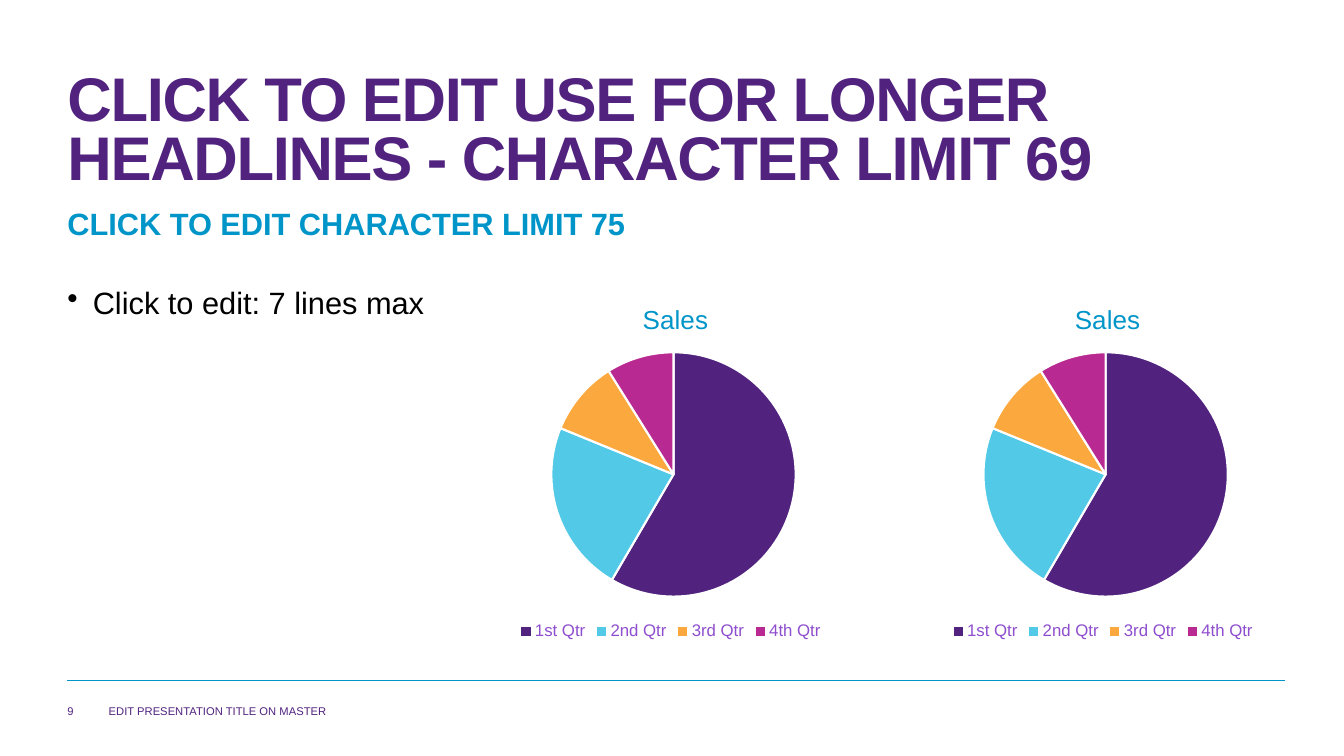
from lxml import etree
from pptx import Presentation
from pptx.chart.data import CategoryChartData
from pptx.dml.color import RGBColor
from pptx.enum.chart import XL_CHART_TYPE, XL_LEGEND_POSITION
from pptx.enum.shapes import MSO_CONNECTOR
from pptx.enum.text import MSO_ANCHOR
from pptx.oxml.ns import qn
from pptx.util import Cm, Pt

PIE = XL_CHART_TYPE.PIE
BOTTOM = XL_LEGEND_POSITION.BOTTOM
STRAIGHT = MSO_CONNECTOR.STRAIGHT
TOP, MIDDLE = MSO_ANCHOR.TOP, MSO_ANCHOR.MIDDLE
PURPLE, BLUE, LILAC = "51237F", "0095C8", "8E4ECE"
SLICES = [PURPLE, "51C9E7", "FBA93E", "B82A91"]
LEFT = 1.7


def style(font, size, color, bold=False):
    font.name, font.size, font.bold = "Arial", Pt(size), bold
    font.color.rgb = RGBColor.from_string(color)


def place(parent, index, **sides):
    for old in parent.findall(qn("c:layout")):
        parent.remove(old)
    layout = etree.Element(qn("c:layout"))
    manual = etree.SubElement(layout, qn("c:manualLayout"))
    if "w" in sides:
        etree.SubElement(manual, qn("c:layoutTarget"), val="inner")
    for tag in ("xMode", "yMode"):
        etree.SubElement(manual, qn("c:" + tag), val="edge")
    for tag, share in sides.items():
        etree.SubElement(manual, qn("c:" + tag), val=str(share))
    parent.insert(index, layout)


prs = Presentation()
prs.slide_width, prs.slide_height = Cm(33.87), Cm(19.05)
slide = prs.slides.add_slide(prs.slide_layouts[6])

rule = slide.shapes.add_connector(STRAIGHT, Cm(LEFT), Cm(17.15), Cm(32.39), Cm(17.15))
rule.line.color.rgb = RGBColor.from_string(BLUE)
rule.line.width = Pt(0.5)
etree.SubElement(rule._element.spPr, qn("a:effectLst"))

texts = [
    ("EDIT PRESENTATION TITLE ON MASTER", 2.74, 17.58, 18.42, 0.66, 8, PURPLE, False, MIDDLE),
    ("9", LEFT, 17.65, 0.53, 0.51, 8, PURPLE, False, MIDDLE),
    ("CLICK TO EDIT USE FOR LONGER HEADLINES - CHARACTER LIMIT 69",
     LEFT, 1.9, 30.63, 3.02, 44, PURPLE, True, TOP),
    ("CLICK TO EDIT CHARACTER LIMIT 75", LEFT, 5.26, 30.68, 1.19, 22, BLUE, True, TOP),
    ("Click to edit: 7 lines max", LEFT, 7.14, 11.28, 9.14, 22, "000000", False, TOP),
]
paras = []
for text, x, y, w, h, size, color, bold, anchor in texts:
    frame = slide.shapes.add_textbox(Cm(x), Cm(y), Cm(w), Cm(h)).text_frame
    frame.word_wrap = True
    frame.vertical_anchor = anchor
    frame.margin_left = frame.margin_right = frame.margin_top = frame.margin_bottom = 0
    para = frame.paragraphs[0]
    para.text = text
    paras.append(para)
    if size == 22 and not bold:
        props = para._p.get_or_add_pPr()
        props.set("marL", str(Cm(0.64)))
        props.set("indent", str(Cm(-0.64)))
        etree.SubElement(props, qn("a:buChar"), char="•")
    style(para.font, size, color, bold)

title, subtitle = paras[2:4]
title.line_spacing = Pt(42)
title.runs[0].font._element.set("spc", "-100")
subtitle.line_spacing = 0.9

data = CategoryChartData()
data.categories = ["1st Qtr", "2nd Qtr", "3rd Qtr", "4th Qtr"]
data.add_series("Series 1", [59, 23, 10, 9])

for x in (20.9, 10.01):
    chart = slide.shapes.add_chart(PIE, Cm(x), Cm(7.04), Cm(13.79), Cm(9.19), data).chart
    style(chart.font, 10, PURPLE)

    chart.has_title = True
    head = chart.chart_title.text_frame.paragraphs[0]
    head.text = "Sales"
    style(head.font, 18.6, BLUE)
    place(chart.chart_title._element, 1, x=0.44, y=0.05)

    chart.has_legend = True
    chart.legend.position = BOTTOM
    chart.legend.include_in_layout = False
    style(chart.legend.font, 12, LILAC)

    plot = chart.plots[0]
    plot.vary_by_categories = True
    place(plot._element.getparent(), 0, x=0.28, y=0.2, w=0.45, h=0.67)
    for index, color in enumerate(SLICES):
        form = plot.series[0].points[index].format
        form.fill.solid()
        form.fill.fore_color.rgb = RGBColor.from_string(color)
        form.line.color.rgb = RGBColor.from_string("FFFFFF")
        form.line.width = Pt(1.5)

prs.save("out.pptx")
